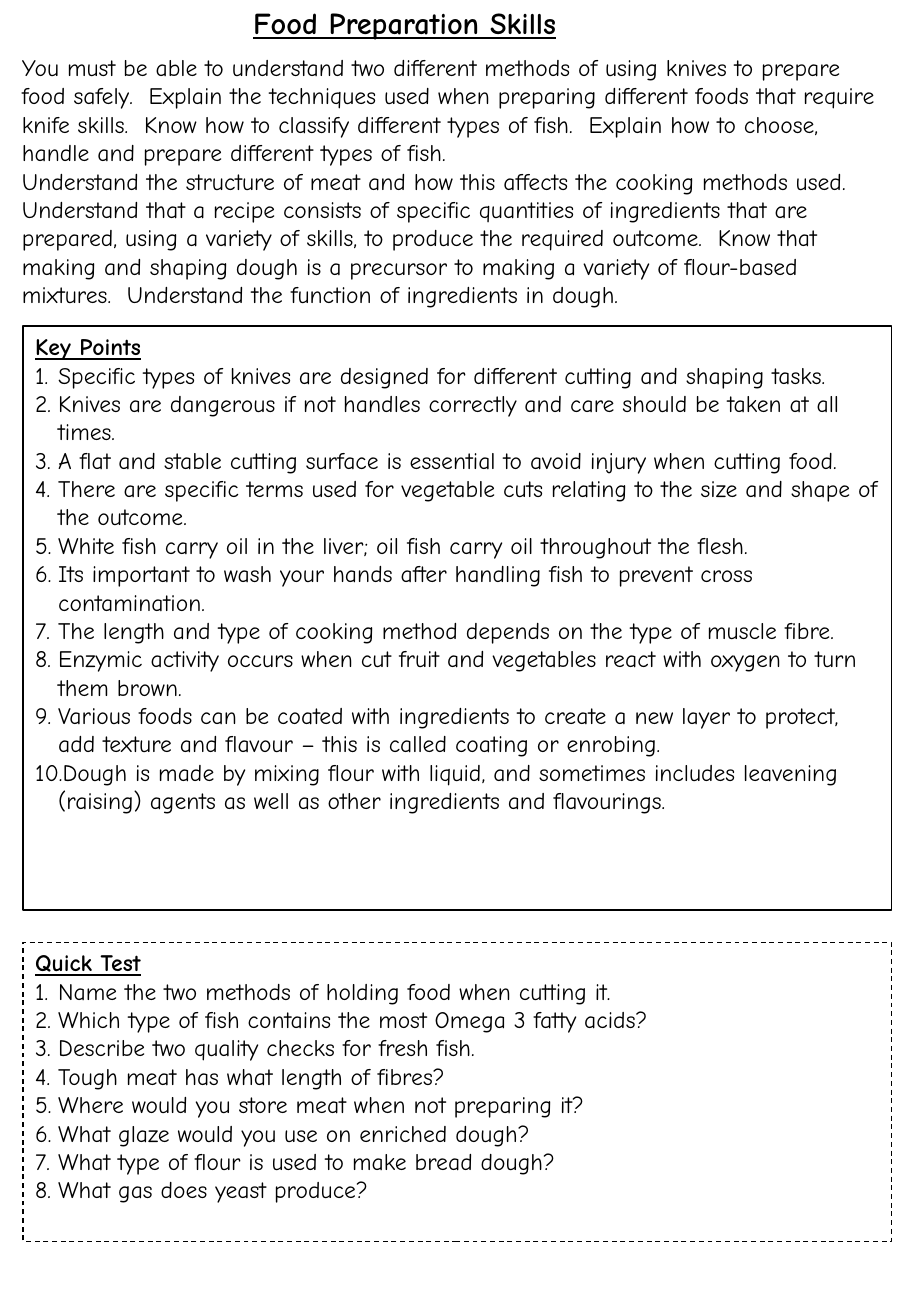
from lxml import etree
from pptx import Presentation
from pptx import util as u
from pptx.dml.color import RGBColor
from pptx.enum import dml, text
from pptx.oxml.ns import qn

PX = 914400 / 121.5
BLACK = RGBColor(0, 0, 0)
WHITE = RGBColor(255, 255, 255)
FONT = "Comic Neue"
INDENT = 23

INTRO = [
    "You must be able to understand two different methods of using knives to prepare food safely.  "
    "Explain the techniques used when preparing different foods that require knife skills.  "
    "Know how to classify different types of fish.  "
    "Explain how to choose, handle and prepare different types of fish.",
    "Understand the structure of meat and how this affects the cooking methods used.  "
    "Understand that a recipe consists of specific quantities of ingredients that are prepared, "
    "using a variety of skills, to produce the required outcome.  "
    "Know that making and shaping dough is a precursor to making a variety of flour-based mixtures.  "
    "Understand the function of ingredients in dough.",
]
POINTS = [
    "Specific types of knives are designed for different cutting and shaping tasks.",
    "Knives are dangerous if not handles correctly and care should be taken at all times.",
    "A flat and stable cutting surface is essential to avoid injury when cutting food.",
    "There are specific terms used for vegetable cuts relating to the size and shape of the outcome.",
    "White fish carry oil in the liver; oil fish carry oil throughout the flesh.",
    "Its important to wash your hands after handling fish to prevent cross contamination.",
    "The length and type of cooking method depends on the type of muscle fibre.",
    "Enzymic activity occurs when cut fruit and vegetables react with oxygen to turn them brown.",
    "Various foods can be coated with ingredients to create a new layer to protect, "
    "add texture and flavour – this is called coating or enrobing.",
    "Dough is made by mixing flour with liquid, and sometimes includes leavening (raising) agents "
    "as well as other ingredients and flavourings.",
]
TESTS = [
    "Name the two methods of holding food when cutting it.",
    "Which type of fish contains the most Omega 3 fatty acids?",
    "Describe two quality checks for fresh fish.",
    "Tough meat has what length of fibres?",
    "Where would you store meat when not preparing it?",
    "What glaze would you use on enriched dough?",
    "What type of flour is used to make bread dough?",
    "What gas does yeast produce?",
]


def px(n):
    return u.Emu(round(n * PX))


def write(par, words, size=14, bold=False, line=False, number=False):
    """Fill one paragraph, numbered or plain."""
    par.alignment = text.PP_ALIGN.LEFT
    par.line_spacing = 1.0
    par.space_before = par.space_after = u.Pt(0)
    run = par.add_run()
    run.text = words
    font = run.font
    font.name, font.size, font.bold, font.underline = FONT, u.Pt(size), bold, line
    font.color.rgb = BLACK
    props = par._p.get_or_add_pPr()
    indent = px(INDENT) if number else 0
    props.set("marL", str(indent))
    props.set("indent", str(-indent))
    if number:
        etree.SubElement(props, qn("a:buFontTx"))
        etree.SubElement(props, qn("a:buAutoNum"), type="arabicPeriod")
    else:
        etree.SubElement(props, qn("a:buNone"))


class Sheet:
    def __init__(self, deck):
        self.slide = deck.slides.add_slide(deck.slide_layouts[3])
        fill = self.slide.background.fill
        fill.solid()
        fill.fore_color.rgb = WHITE

    def place(self, shape, box):
        shape.left, shape.top, shape.width, shape.height = map(px, box)
        frame = shape.text_frame
        frame.word_wrap = True
        frame.auto_size = text.MSO_AUTO_SIZE.NONE
        frame.vertical_anchor = text.MSO_ANCHOR.TOP
        return frame

    def title(self, words, box):
        frame = self.place(self.slide.shapes.title, box)
        write(frame.paragraphs[0], words, size=18, bold=True, line=True)

    def prose(self, parts, box):
        frame = self.place(self.slide.shapes.add_textbox(0, 0, 0, 0), box)
        for i, part in enumerate(parts):
            write(frame.add_paragraph() if i else frame.paragraphs[0], part)

    def panel(self, index, head, items, box, dash=None):
        shape = self.slide.placeholders[index]
        frame = self.place(shape, box)
        shape.line.color.rgb = BLACK
        shape.line.width = u.Pt(0.75)
        if dash:
            shape.line.dash_style = dash
        write(frame.paragraphs[0], head, bold=True, line=True)
        for item in items:
            write(frame.add_paragraph(), item, number=True)


def main():
    deck = Presentation()
    deck.slide_width, deck.slide_height = u.Inches(7.5), u.Inches(10.83)
    sheet = Sheet(deck)

    # Heading and introduction
    sheet.title("Food Preparation Skills", (241, -2, 854, 49))
    sheet.prose(INTRO, (10, 47, 882, 270))

    # Numbered lists in frames
    sheet.panel(1, "Key Points", POINTS, (23, 326, 869, 584))
    sheet.panel(2, "Quick Test", TESTS, (23, 942, 869, 299), dash=dml.MSO_LINE.DASH)

    deck.save("out.pptx")


if __name__ == "__main__":
    main()
